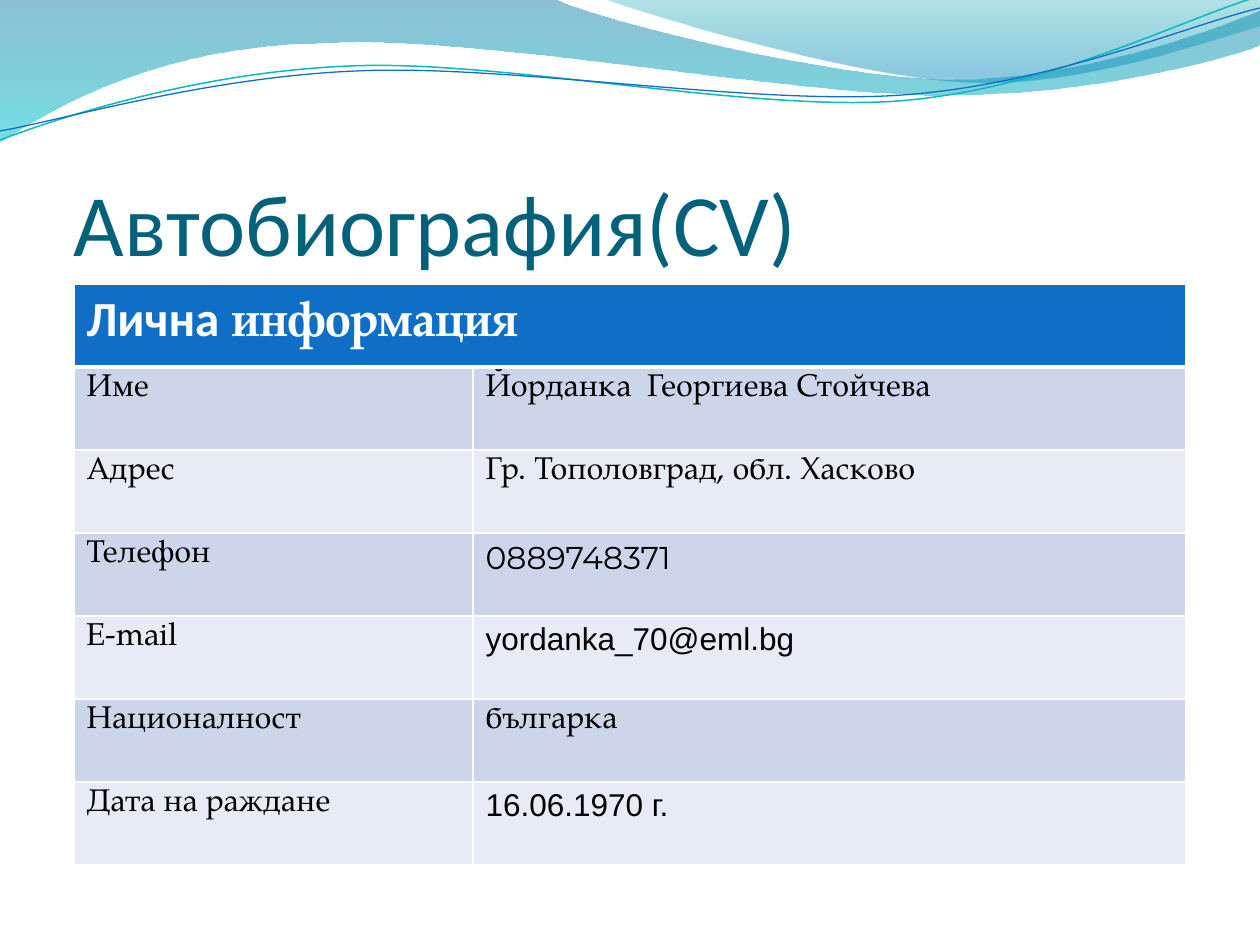
from lxml import etree
from pptx import Presentation, util as u
from pptx.dml.color import RGBColor
from pptx.enum import text
from pptx.oxml import ns

PX = 914400 / 126
COLORS = {
    "title": "04617B", "header": "0F6FC6", "band": "CCD5EA", "plain": "E7EBF5",
    "white": "FFFFFF", "black": "000000", "teal_line": "0AB8BF", "blue_line": "0F6FC6",
    "deep": "0074A1", "cyan": "00C6CF", "teal": "00A1A9", "sea": "008BBF",
}
SERIF = "TeX Gyre Pagella"

# Outlines: a start point, then line ends (1 point) or cubic curves (3 points)
WAVE_LEFT = [[(0, 0)], [(554, -1)],
             [(600, 21), (837, 79), (955, 79)], [(1075, 79), (1207, 33), (1260, 11)],
             [(1261, 45)], [(1239, 55), (1096, 96), (940, 95)],
             [(784, 95), (481, 35), (324, 43)], [(163, 45), (58, 105), (-1, 142)]]
WAVE_RIGHT = [[(604, -1)], [(641, 14), (859, 78), (969, 82)],
              [(1079, 87), (1211, 40), (1260, 26)], [(1260, 0)]]
LINE_TEAL = [[(0, 140)], [(60, 117), (199, 72), (349, 66)],
             [(498, 59), (747, 112), (898, 101)], [(1050, 89), (1182, 19), (1257, -3)]]
LINE_BLUE = [[(0, 131)], [(59, 121), (207, 77), (357, 71)],
             [(508, 64), (752, 106), (903, 95)], [(1053, 84), (1185, 26), (1260, 8)]]

ROWS = [
    ("Име", "Йорданка  Георгиева Стойчева", SERIF),
    ("Адрес", "Гр. Тополовград, обл. Хасково", SERIF),
    ("Телефон", "0889748371", "Montserrat"),
    ("E-mail", "yordanka_70@eml.bg", "Arial"),
    ("Националност", "българка", SERIF),
    ("Дата на раждане", "16.06.1970 г.", "Arial"),
]


def px(n):
    return u.Emu(round(n * PX))


def rgb(name):
    return RGBColor.from_string(COLORS[name])


def add_run(p, words, font, size, color, bold=False):
    r = p.add_run()
    r.text = words
    r.font.name, r.font.size, r.font.bold = font, u.Pt(size), bold
    r.font.color.rgb = rgb(color)


def add_outline(s, box, outline, close):
    points = [(px(box[0] + x), px(box[1] + y)) for part in outline for x, y in part]
    fb = s.shapes.build_freeform(*points[0])
    fb.add_line_segments(points[1:], close=close)
    sp = fb.convert_to_shape()
    sp.shadow.inherit = False
    # Gather each three line ends of a curve into one cubic segment
    ends = iter(list(sp._element.iter(ns.qn("a:lnTo"))))
    for part in outline[1:]:
        segments = [next(ends) for _ in part]
        if len(part) == 3:
            curve = etree.Element(ns.qn("a:cubicBezTo"))
            segments[0].addprevious(curve)
            for segment in segments:
                curve.append(segment[0])
                segment.getparent().remove(segment)
    return sp


def add_waves(s, box):
    # Translucent bands: (position, colour, opacity in percent)
    for outline, stops in (
        (WAVE_LEFT, [(0, "deep", 45), (1, "cyan", 55)]),
        (WAVE_RIGHT, [(0, "teal", 30), (0.8, "sea", 45)]),
    ):
        sp = add_outline(s, box, outline, True)
        sp.line.fill.background()
        sp.fill.gradient()
        sp.fill.gradient_angle = 270
        for stop, (position, color, _) in zip(sp.fill.gradient_stops, stops):
            stop.position = position
            stop.color.rgb = rgb(color)
        for clr, (_, _, opacity) in zip(sp._element.spPr.iter(ns.qn("a:srgbClr")), stops):
            etree.SubElement(clr, ns.qn("a:alpha"), val=str(opacity * 1000))
    # Thin lines
    for outline, color, width in ((LINE_TEAL, "teal_line", 0.85), (LINE_BLUE, "blue_line", 0.75)):
        sp = add_outline(s, box, outline, False)
        sp.fill.background()
        sp.line.color.rgb = rgb(color)
        sp.line.width = u.Pt(width)


def add_title(s, box):
    tf = s.shapes.add_textbox(*map(px, box)).text_frame
    tf.word_wrap = True
    tf.vertical_anchor = text.MSO_ANCHOR.BOTTOM
    tf.margin_left = tf.margin_right = tf.margin_bottom = 0
    add_run(tf.paragraphs[0], "Автобиография(CV)", "Calibri", 50, "title")


def style_cell(cell, fill, bottom=1, top=1):
    tcPr = cell._tc.get_or_add_tcPr()
    for side, width in (("L", 1), ("R", 1), ("T", top), ("B", bottom)):
        ln = etree.SubElement(tcPr, ns.qn("a:ln" + side), w=str(u.Pt(width)))
        solid = etree.SubElement(ln, ns.qn("a:solidFill"))
        etree.SubElement(solid, ns.qn("a:srgbClr"), val=COLORS["white"])
    cell.fill.solid()
    cell.fill.fore_color.rgb = rgb(fill)


def add_info_table(s, box):
    table = s.shapes.add_table(len(ROWS) + 1, 2, *map(px, box)).table
    for column, width in zip(table.columns, (399, box[2] - 399)):
        column.width = px(width)
    for row in table.rows:
        row.height = px(box[3] // len(table.rows))
    # Header across both columns
    for col in (0, 1):
        style_cell(table.cell(0, col), "header", bottom=3)
    head = table.cell(0, 0)
    head.merge(table.cell(0, 1))
    p = head.text_frame.paragraphs[0]
    add_run(p, "Лична", "Calibri", 28, "white", True)
    add_run(p, " информация", SERIF, 28, "white", True)
    # Label and value rows
    for i, (label, value, font) in enumerate(ROWS, 1):
        for col, (words, face) in enumerate(((label, SERIF), (value, font))):
            cell = table.cell(i, col)
            style_cell(cell, "band" if i % 2 else "plain", top=3 if i == 1 else 1)
            add_run(cell.text_frame.paragraphs[0], words, face, 18, "black")


def main():
    prs = Presentation()
    prs.slide_width, prs.slide_height = px(1260), px(945)
    s = prs.slides.add_slide(prs.slide_layouts[6])
    add_waves(s, (0, 0, 1260, 142))
    add_title(s, (74, 17, 1134, 257))
    add_info_table(s, (74, 284, 1112, 583))
    prs.save("out.pptx")


if __name__ == "__main__":
    main()
